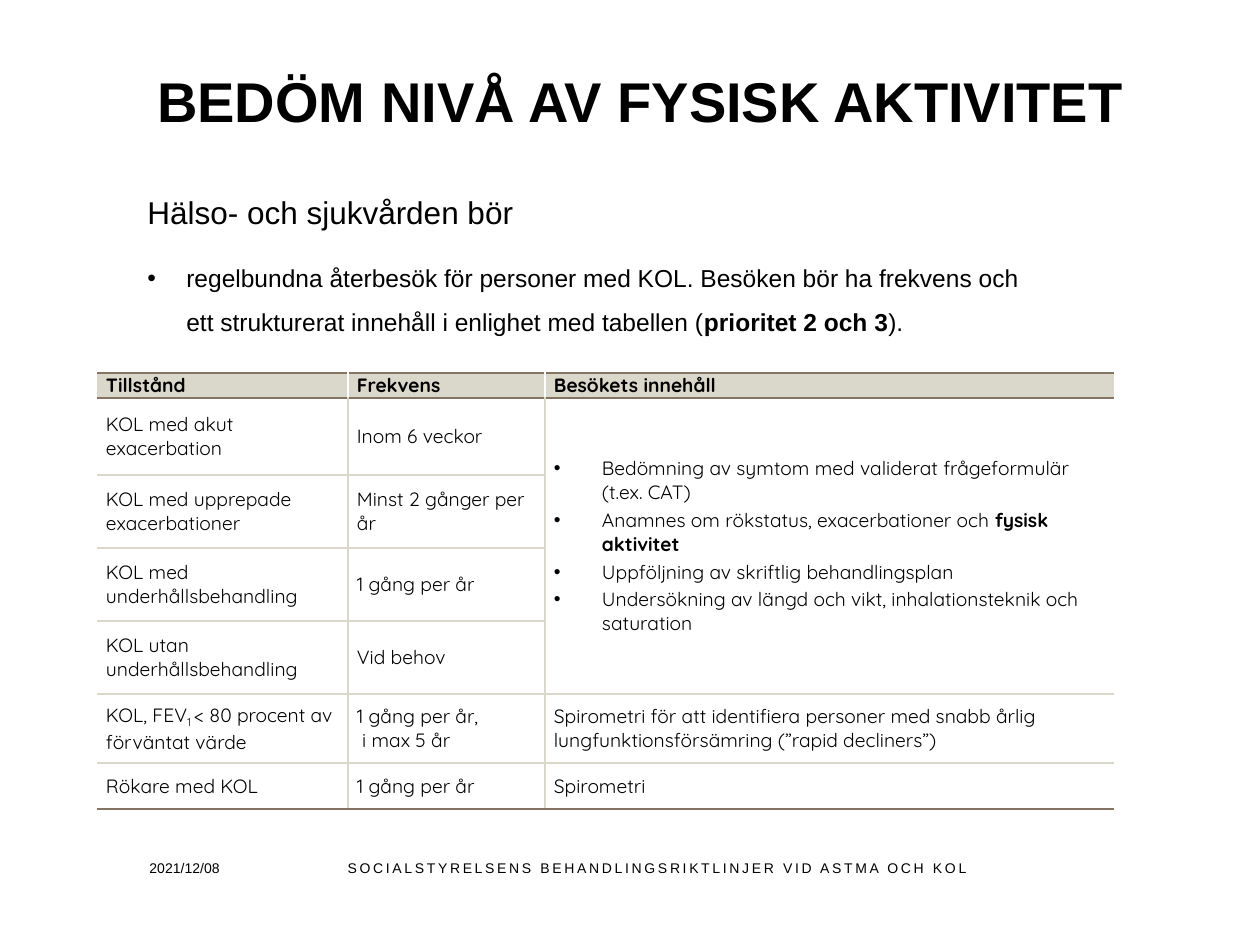
from lxml import etree
from pptx import Presentation
from pptx import util as u
from pptx.dml.color import RGBColor
from pptx.enum import text
from pptx.oxml.ns import qn

SCALE = 914400 / 126
BLACK, WHITE, SAND, BROWN = "000000", "FFFFFF", "DAD7CB", "857363"
PLAIN = "{2D5ABB26-0587-4C30-8999-92F81FD0307C}"
BOLD, SUB = {"bold": True}, {"base": -25000}


def px(n):
    return u.Emu(round(n * SCALE))


def rgb(code):
    return RGBColor.from_string(code)


def bullet(para, indent):
    props = para._p.get_or_add_pPr()
    props.set("marL", str(px(indent)))
    props.set("indent", str(-px(indent)))
    etree.SubElement(props, qn("a:buFont")).set("typeface", "Arial")
    etree.SubElement(props, qn("a:buChar")).set("char", "•")


def edge(cell, side, color, width):
    """Draw one border; call in the order L, R, T, B and before any fill."""
    line = etree.SubElement(cell._tc.get_or_add_tcPr(), qn("a:ln" + side))
    line.set("w", str(u.Pt(width)))
    fill = etree.SubElement(line, qn("a:solidFill"))
    etree.SubElement(fill, qn("a:srgbClr")).set("val", color)


class Page:
    def __init__(self, slide, font):
        self.slide, self.font = slide, font

    def run(self, para, words, size, font=None, bold=False, base=0, track=0):
        for i, part in enumerate(words.split("\n")):
            if i:
                para.add_line_break()
            run = para.add_run()
            run.text = part
            run.font.name = font or self.font
            run.font.size = u.Pt(size)
            run.font.bold = bold
            run.font.color.rgb = rgb(BLACK)
            props = run._r.get_or_add_rPr()
            if base:
                props.set("baseline", str(base))
            if track:
                props.set("spc", str(track))

    def place(self, shape, box):
        shape.left, shape.top, shape.width, shape.height = map(px, box)

    def title(self, words, box, size):
        shape = self.slide.shapes.title
        self.place(shape, box)
        frame = shape.text_frame
        frame.word_wrap = True
        frame.vertical_anchor = text.MSO_ANCHOR.MIDDLE
        para = frame.paragraphs[0]
        para.alignment = text.PP_ALIGN.CENTER
        self.run(para, words, size, bold=True)

    def box(self, box, anchor=text.MSO_ANCHOR.TOP):
        frame = self.slide.shapes.add_textbox(*map(px, box)).text_frame
        frame.word_wrap = True
        frame.vertical_anchor = anchor
        return frame

    def label(self, words, box, align, track=0):
        para = self.box(box, text.MSO_ANCHOR.MIDDLE).paragraphs[0]
        para.alignment = align
        self.run(para, words, 8, track=track)

    def body(self, lead, point, box):
        frame = self.box(box)
        first, second = frame.paragraphs[0], frame.add_paragraph()
        self.run(first, lead, 18)
        bullet(second, 39)
        second.space_before = u.Pt(10)
        for words, look in point:
            self.run(second, words, 14, **look)
        for para in (first, second):
            para.line_spacing = 1.5

    def cell(self, cell, paras, head):
        """Fill a cell; several paragraphs become a bulleted list."""
        cell.margin_left = cell.margin_right = px(9)
        cell.margin_top = cell.margin_bottom = 0
        cell.vertical_anchor = text.MSO_ANCHOR.MIDDLE
        frame = cell.text_frame
        for i, runs in enumerate(paras):
            para = frame.add_paragraph() if i else frame.paragraphs[0]
            if len(paras) > 1:
                bullet(para, 48)
            if i:
                para.space_before = u.Pt(1)
            para.space_after = u.Pt(2 if head else 1)
            for words, look in runs:
                self.run(para, words, 11, "Quicksand", **(BOLD if head else look))

    def table(self, rows, left, top, wide, high, span):
        frame = self.slide.shapes.add_table(
            len(rows), len(wide), px(left), px(top), px(sum(wide)), px(sum(high)))
        grid = frame.table
        grid.horz_banding = False
        grid._tbl.tblPr.find(qn("a:tableStyleId")).text = PLAIN
        for col, width in zip(grid.columns, wide):
            col.width = px(width)
        for row, height in zip(grid.rows, high):
            row.height = px(height)
        (r1, c1), (r2, c2) = span
        grid.cell(r1, c1).merge(grid.cell(r2, c2))
        last = len(rows) - 1
        for r, row in enumerate(rows):
            head = r == 0
            for c in range(len(wide)):
                cell = grid.cell(r, c)
                if cell.is_spanned:
                    continue
                side = WHITE if head else SAND
                if c > 0:
                    edge(cell, "L", side, 1)
                if c < len(wide) - 1:
                    edge(cell, "R", side, 1)
                edge(cell, "T", BROWN if r < 2 else SAND, 1.5 if head else 1)
                strong = r in (0, last)
                edge(cell, "B", BROWN if strong else SAND, 1.5 if strong else 1)
                if head:
                    cell.fill.solid()
                    cell.fill.fore_color.rgb = rgb(SAND)
                else:
                    cell.fill.background()
                value = row[c]
                self.cell(cell, [[(value, {})]] if isinstance(value, str) else value, head)


VISIT = [
    [("Bedömning av symtom med validerat frågeformulär (t.ex. CAT)", {})],
    [("Anamnes om rökstatus, exacerbationer och ", {}), ("fysisk aktivitet", BOLD)],
    [("Uppföljning av skriftlig behandlingsplan", {})],
    [("Undersökning av längd och vikt, inhalationsteknik och saturation", {})],
]
LUNG = [[("KOL, FEV", {}), ("1 ", SUB), ("< 80 procent av förväntat värde", {})]]
ROWS = [
    ("Tillstånd", "Frekvens", "Besökets innehåll"),
    ("KOL med akut\nexacerbation", "Inom 6 veckor", VISIT),
    ("KOL med upprepade exacerbationer", "Minst 2 gånger per år"),
    ("KOL med underhållsbehandling", "1 gång per år"),
    ("KOL utan underhållsbehandling", "Vid behov"),
    (LUNG, "1 gång per år,\n i max 5 år",
     "Spirometri för att identifiera personer med snabb årlig "
     "lungfunktionsförsämring (”rapid decliners”)"),
    ("Rökare med KOL", "1 gång per år", "Spirometri"),
]


def main():
    deck = Presentation()
    deck.slide_width, deck.slide_height = px(1260), px(945)
    page = Page(deck.slides.add_slide(deck.slide_layouts[5]), "Arial")
    page.title("BEDÖM NIVÅ AV FYSISK AKTIVITET", (135, 21, 1011, 158), 32)
    page.body("Hälso- och sjukvården bör", [
        ("regelbundna återbesök för personer med KOL. Besöken bör ha frekvens och "
         "ett strukturerat innehåll i enlighet med tabellen (", {}),
        ("prioritet 2 och 3", BOLD),
        (").", {}),
    ], (135, 168, 917, 536))
    page.table(ROWS, 97, 373, (251, 197, 569), (25, 77, 73, 73, 73, 69, 46),
               ((1, 2), (4, 2)))
    page.label("SOCIALSTYRELSENS BEHANDLINGSRIKTLINJER VID ASTMA OCH KOL",
               (315, 843, 665, 50), text.PP_ALIGN.RIGHT, track=150)
    page.label("2021/12/08", (137, 843, 198, 50), text.PP_ALIGN.LEFT)
    deck.save("out.pptx")


if __name__ == "__main__":
    main()
